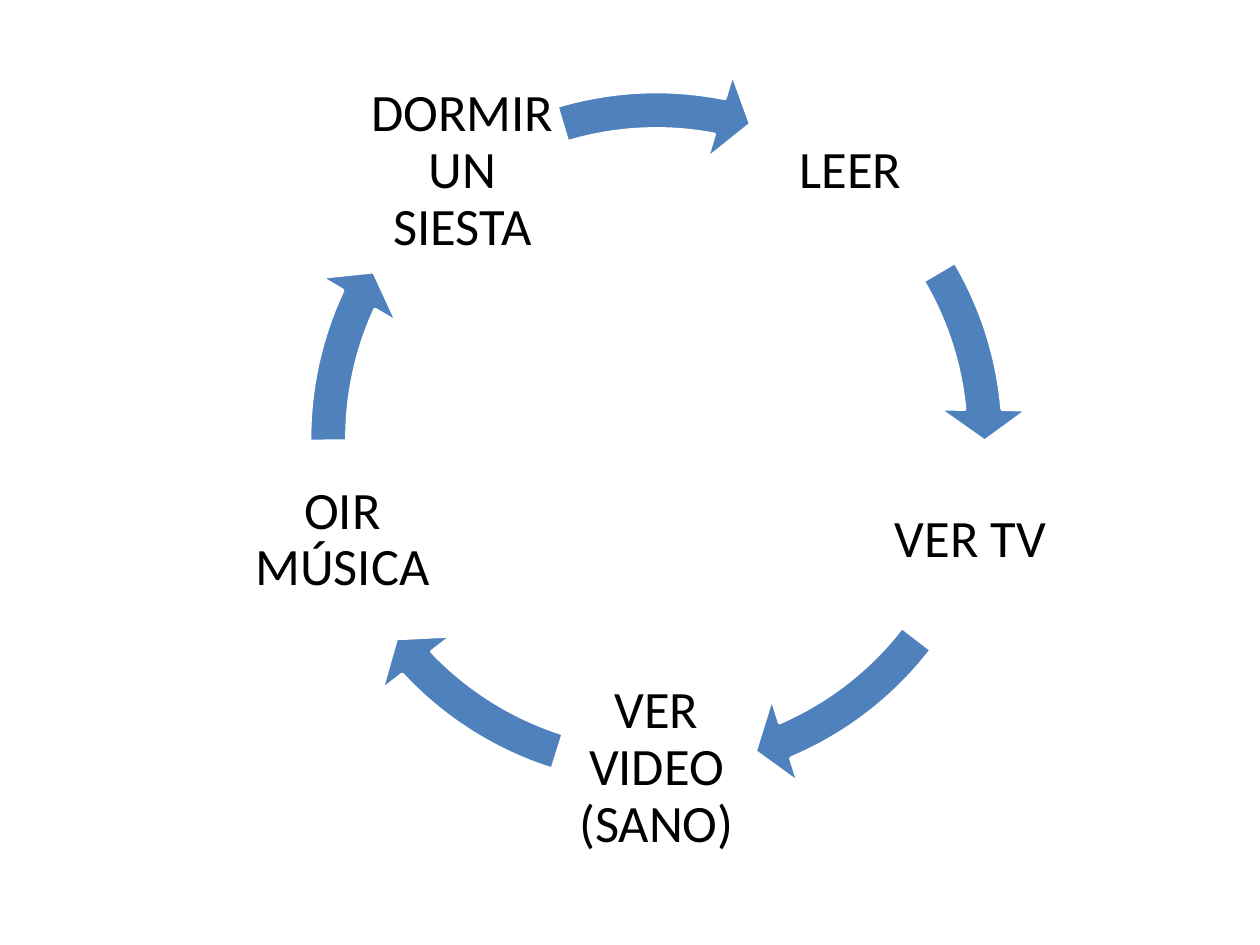
from math import cos, radians, sin

from pptx import Presentation
from pptx.dml.color import RGBColor
from pptx.enum.shapes import MSO_SHAPE as Shape
from pptx.enum.text import MSO_ANCHOR as Anchor, PP_ALIGN as Align
from pptx.util import Inches, Pt

BLACK = RGBColor(0x00, 0x00, 0x00)
WHITE = RGBColor(0xFF, 0xFF, 0xFF)
BLUE = RGBColor(0x4F, 0x81, 0xBD)

CENTER_X, CENTER_Y = 5.21, 3.48
LABEL_RADIUS = 2.62
LABEL_SIZE = 1.58
RING_SIZE = 5.92
FIRST_ANGLE = -54
RING_THICKNESS = 0.05
HEAD_WIDTH = 0.06
HEAD_ANGLE = 5.6
ADJUSTMENT_PER_DEGREE = 0.6

STEPS = [
    ("LEER", 329.44, 354.89),
    ("VER TV", 37.56, 66.91),
    ("VER VIDEO (SANO)", 107.49, 136.84),
    ("OIR MÚSICA", 179.52, 204.96),
    ("DORMIR UN SIESTA", 253.31, 281.09),
]


def write_text(frame, text, *, font="Calibri", size=30, color=BLACK,
               align=Align.CENTER, line_spacing=0.9):
    paragraph = frame.paragraphs[0]
    paragraph.alignment = align
    paragraph.line_spacing = line_spacing
    run = paragraph.add_run()
    run.text = text
    run.font.name = font
    run.font.size = Pt(size)
    run.font.color.rgb = color


def centered_square(x, y, size):
    return Inches(x - size / 2), Inches(y - size / 2), Inches(size), Inches(size)


class CycleSlide:
    def __init__(self, slide, arrow_color=BLUE, outline_color=WHITE, inset=0.04):
        self.arrow_color = arrow_color
        self.outline_color = outline_color
        self.inset = Inches(inset)
        self.shapes = slide.shapes.add_group_shape().shapes

    def label(self, text, angle):
        x = CENTER_X + LABEL_RADIUS * cos(radians(angle))
        y = CENTER_Y + LABEL_RADIUS * sin(radians(angle))
        frame = self.shapes.add_textbox(*centered_square(x, y, LABEL_SIZE)).text_frame
        frame.word_wrap = True
        frame.vertical_anchor = Anchor.MIDDLE
        frame.margin_left = frame.margin_right = self.inset
        frame.margin_top = frame.margin_bottom = self.inset
        write_text(frame, text)

    def arrow(self, start, end):
        shape = self.shapes.add_shape(
            Shape.CIRCULAR_ARROW, *centered_square(CENTER_X, CENTER_Y, RING_SIZE))
        angles = [angle * ADJUSTMENT_PER_DEGREE for angle in (HEAD_ANGLE, end, start)]
        for index, value in enumerate([RING_THICKNESS, *angles, HEAD_WIDTH]):
            shape.adjustments[index] = value
        shape.shadow.inherit = False
        shape.fill.solid()
        shape.fill.fore_color.rgb = self.arrow_color
        shape.line.color.rgb = self.outline_color
        shape.line.width = Pt(2)


def main():
    presentation = Presentation()
    presentation.slide_width = Inches(10)
    presentation.slide_height = Inches(7.5)
    slide = presentation.slides.add_slide(presentation.slide_layouts[6])
    cycle = CycleSlide(slide)
    for index, (text, start, end) in enumerate(STEPS):
        cycle.label(text, FIRST_ANGLE + index * 360 / len(STEPS))
        cycle.arrow(start, end)
    presentation.save("out.pptx")


if __name__ == "__main__":
    main()
